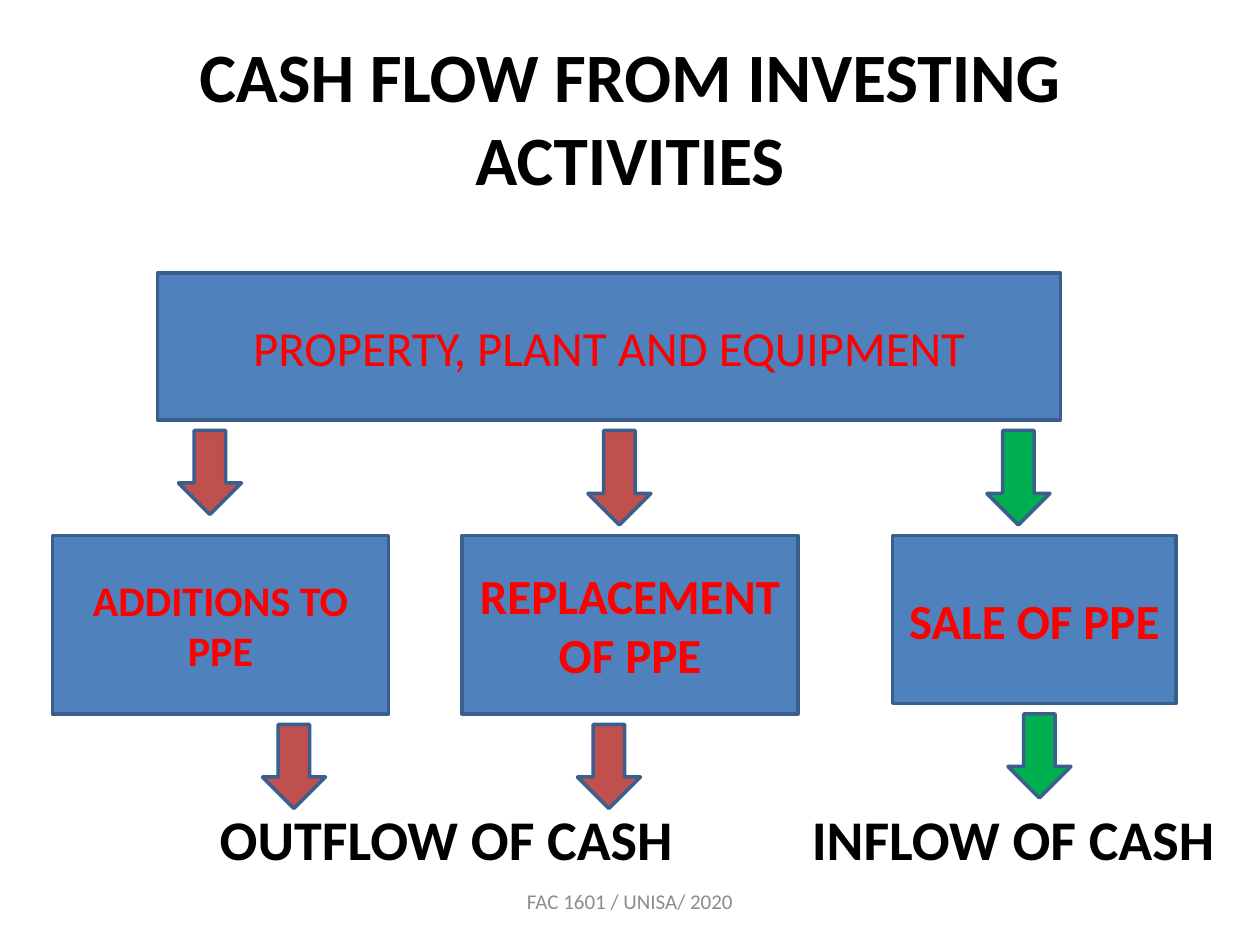
from dataclasses import dataclass

from pptx import Presentation
from pptx import util as u
from pptx.dml.color import RGBColor
from pptx.enum import shapes, text

PX = u.Inches(1) // 120


@dataclass(frozen=True)
class Theme:
    font: str = "Calibri"
    ink: str = "000000"
    muted: str = "8C8C8C"
    label: str = "FF0000"
    box_fill: str = "4F81BD"
    border: str = "3A5F8C"
    outflow: str = "C0504D"
    inflow: str = "00B050"
    title_size: float = 39.6
    result_size: int = 32
    label_size: int = 28
    small_label_size: int = 24
    footer_size: int = 12
    border_width: int = 2


def write(frame, wording, *, size, color, font, bold=False,
          anchor=text.MSO_ANCHOR.MIDDLE):
    frame.word_wrap = True
    frame.auto_size = text.MSO_AUTO_SIZE.NONE
    frame.vertical_anchor = anchor
    para = frame.paragraphs[0]
    para.alignment = text.PP_ALIGN.CENTER
    span = para.add_run()
    span.text = wording
    span.font.name = font
    span.font.size = u.Pt(size)
    span.font.bold = bold
    span.font.color.rgb = RGBColor.from_string(color)


class SlideBuilder:
    def __init__(self, page, theme):
        self.page = page
        self.theme = theme

    def title(self, wording, left, top, width, height):
        box = self.page.shapes.title
        box.left, box.top, box.width, box.height = (
            n * PX for n in (left, top, width, height))
        write(box.text_frame, wording, size=self.theme.title_size,
              color=self.theme.ink, font=self.theme.font, bold=True)

    def shape(self, kind, left, top, width, height, fill):
        shape = self.page.shapes.add_shape(
            kind, left * PX, top * PX, width * PX, height * PX)
        shape.shadow.inherit = False
        shape.fill.solid()
        shape.fill.fore_color.rgb = RGBColor.from_string(fill)
        shape.line.color.rgb = RGBColor.from_string(self.theme.border)
        shape.line.width = u.Pt(self.theme.border_width)
        return shape

    def box(self, wording, left, top, width, height, size, bold=True):
        box = self.shape(shapes.MSO_SHAPE.RECTANGLE, left, top, width, height,
                         self.theme.box_fill)
        write(box.text_frame, wording, size=size, color=self.theme.label,
              font=self.theme.font, bold=bold)

    def down_arrow(self, left, top, height, fill):
        self.shape(shapes.MSO_SHAPE.DOWN_ARROW, left, top, 60, height, fill)

    def text(self, wording, left, top, width, height, indent=12, **style):
        box = self.page.shapes.add_textbox(
            left * PX, top * PX, width * PX, height * PX)
        box.text_frame.margin_left = indent * PX
        write(box.text_frame, wording, font=self.theme.font, **style)


def main():
    deck = Presentation()
    deck.slide_width, deck.slide_height = 1200 * PX, 900 * PX
    theme = Theme()
    slide = SlideBuilder(deck.slides.add_slide(deck.slide_layouts[5]), theme)

    slide.title("CASH FLOW FROM INVESTING ACTIVITIES", 60, 36, 1080, 150)
    slide.box("PROPERTY, PLANT AND EQUIPMENT", 150, 260, 860, 140,
              theme.label_size, bold=False)

    activities = [
        ("ADDITIONS TO PPE", 50, 320, 170, theme.small_label_size),
        ("REPLACEMENT OF PPE", 440, 320, 170, theme.label_size),
        ("SALE OF PPE", 850, 270, 160, theme.label_size),
    ]
    for wording, left, width, height, size in activities:
        slide.box(wording, left, 510, width, height, size)

    arrows = [
        (170, 410, 80, theme.outflow),
        (560, 410, 90, theme.outflow),
        (940, 410, 90, theme.inflow),
        (250, 690, 80, theme.outflow),
        (550, 690, 80, theme.outflow),
        (960, 680, 80, theme.inflow),
    ]
    for left, top, height, fill in arrows:
        slide.down_arrow(left, top, height, fill)

    result_style = dict(size=theme.result_size, color=theme.ink, bold=True,
                        anchor=text.MSO_ANCHOR.TOP)
    slide.text("OUTFLOW OF CASH", 60, 760, 660, 77, indent=82, **result_style)
    slide.text("INFLOW OF CASH", 750, 760, 430, 77, **result_style)
    slide.text("FAC 1601 / UNISA/ 2020", 410, 834, 380, 48,
               size=theme.footer_size, color=theme.muted)

    deck.save("out.pptx")


if __name__ == "__main__":
    main()
